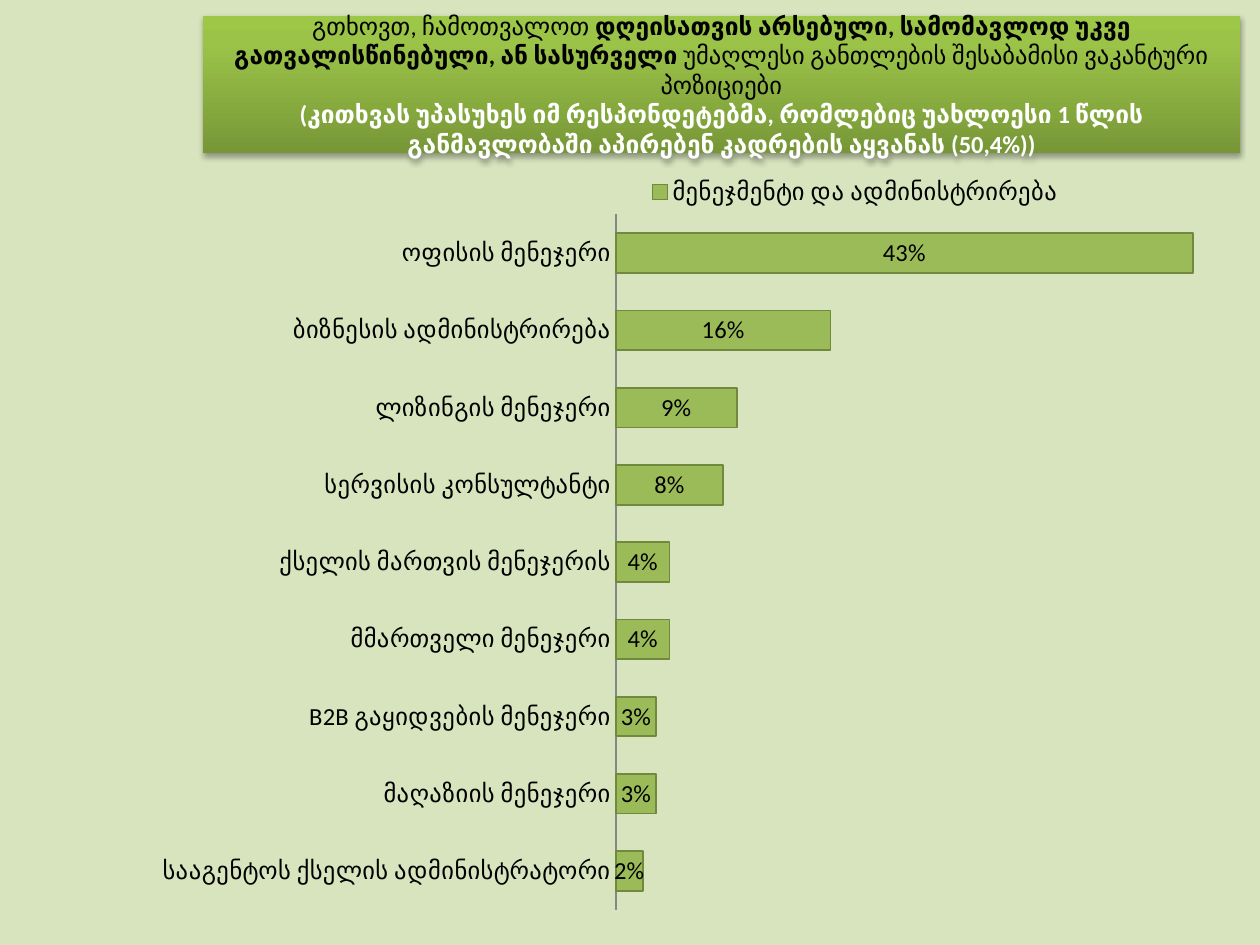
from copy import deepcopy

from lxml import etree
from pptx import Presentation
from pptx import util as u
from pptx.chart.data import CategoryChartData
from pptx.dml.color import RGBColor
from pptx.enum import chart as charts, shapes, text
from pptx.oxml import parse_xml
from pptx.oxml.ns import nsdecls, qn

PX = 914400 / 126
COLORS = {
    "background": "D7E4BD", "black": "000000", "white": "FFFFFF",
    "bar": "9BBB59", "outline": "71893F", "axis": "868686",
}
BANNER_STOPS = [("779737", 0), ("9BC348", 0.8), ("9DC746", 1)]
HEADING = [
    [("გთხოვთ, ჩამოთვალოთ ", "black", False),
     ("დღეისათვის არსებული, სამომავლოდ უკვე გათვალისწინებული, ან სასურველი ", "black", True),
     ("უმაღლესი განთლების შესაბამისი ვაკანტური პოზიციები", "black", False)],
    [("(კითხვას უპასუხეს იმ რესპონდეტებმა, რომლებიც უახლოესი 1 წლის "
      "განმავლობაში აპირებენ კადრების აყვანას (50,4%))", "white", True)],
]
SERIES = "მენეჯმენტი და ადმინისტრირება"
POSITIONS = {
    "სააგენტოს ქსელის ადმინისტრატორი": 0.02,
    "მაღაზიის მენეჯერი": 0.03,
    "B2B გაყიდვების მენეჯერი": 0.03,
    "მმართველი მენეჯერი": 0.04,
    "ქსელის მართვის მენეჯერის": 0.04,
    "სერვისის კონსულტანტი": 0.08,
    "ლიზინგის მენეჯერი": 0.09,
    "ბიზნესის ადმინისტრირება": 0.16,
    "ოფისის მენეჯერი": 0.43,
}


def px(*lengths):
    return [u.Emu(round(length * PX)) for length in lengths]


def color(name):
    return RGBColor.from_string(COLORS[name])


def assign(target, **values):
    for name, value in values.items():
        setattr(target, name, value)


def manual_layout(x, y, w, h, inner=False):
    """Return a chart layout element, in fractions of the chart area."""
    target = '<c:layoutTarget val="inner"/>' if inner else ""
    modes = '<c:xMode val="edge"/><c:yMode val="edge"/>'
    sizes = "".join(f'<c:{key} val="{value}"/>' for key, value in zip("xywh", (x, y, w, h)))
    return parse_xml(f'<c:layout {nsdecls("c")}><c:manualLayout>{target}{modes}{sizes}'
                     '</c:manualLayout></c:layout>')


class SlideBuilder:
    def __init__(self, slide, font="Calibri", size=14):
        self.slide = slide
        self.font_values = {"name": font, "size": u.Pt(size)}

    def background(self, name):
        fill = self.slide.background.fill
        fill.solid()
        fill.fore_color.rgb = color(name)

    def style_font(self, font, name="black", bold=False):
        assign(font, **self.font_values, bold=bold)
        font.color.rgb = color(name)

    def banner(self, box, stops, paragraphs):
        shape = self.slide.shapes.add_shape(shapes.MSO_SHAPE.RECTANGLE, *px(*box))
        shape.line.fill.background()
        self.gradient(shape, stops)
        self.shadow(shape)
        frame = shape.text_frame
        assign(frame, word_wrap=True, vertical_anchor=text.MSO_ANCHOR.MIDDLE)
        for index, runs in enumerate(paragraphs):
            paragraph = frame.add_paragraph() if index else frame.paragraphs[0]
            paragraph.alignment = text.PP_ALIGN.CENTER
            for words, name, bold in runs:
                run = paragraph.add_run()
                run.text = words
                self.style_font(run.font, name, bold)

    def gradient(self, shape, stops):
        fill = shape.fill
        fill.gradient()
        fill.gradient_angle = 90
        stop_list = shape._element.spPr.find(".//" + qn("a:gsLst"))
        stop_list.append(deepcopy(stop_list[0]))
        for stop, (rgb, position) in zip(fill.gradient_stops, stops):
            stop.color.rgb = RGBColor.from_string(rgb)
            stop.position = position

    def shadow(self, shape):
        shape.shadow.inherit = False
        effects = shape._element.spPr.find(qn("a:effectLst"))
        outer = etree.SubElement(effects, qn("a:outerShdw"), blurRad=str(u.Pt(3.1)),
                                 dist=str(u.Pt(1.8)), dir="5400000", rotWithShape="0")
        shade = etree.SubElement(outer, qn("a:srgbClr"), val=COLORS["black"])
        etree.SubElement(shade, qn("a:alpha"), val="35000")

    def bar_chart(self, box, series_name, values):
        data = CategoryChartData(number_format="0%")
        data.categories = list(values)
        data.add_series(series_name, list(values.values()))
        chart = self.slide.shapes.add_chart(
            charts.XL_CHART_TYPE.BAR_STACKED, *px(*box), data).chart
        assign(chart, has_title=False, has_legend=True)
        self.style_font(chart.font)
        assign(chart.legend, position=charts.XL_LEGEND_POSITION.TOP, include_in_layout=False)
        chart.legend._element.find(qn("c:legendPos")).addnext(
            manual_layout(0.51, 0.01, 0.34, 0.05))
        plot_area = chart._chartSpace.chart.plotArea
        for layout in plot_area.findall(qn("c:layout")):
            plot_area.remove(layout)
        plot_area.insert(0, manual_layout(0.484, 0.065, 0.5, 0.91, inner=True))

        assign(chart.value_axis, visible=False, has_major_gridlines=False,
               minimum_scale=0, maximum_scale=0.455)
        axis = chart.category_axis
        assign(axis, major_tick_mark=charts.XL_TICK_MARK.NONE, has_major_gridlines=False)
        axis.format.line.color.rgb = color("axis")

        plot = chart.plots[0]
        assign(plot, gap_width=95, overlap=100, vary_by_categories=False, has_data_labels=True)
        assign(plot.data_labels, show_value=True, number_format="0%",
               number_format_is_linked=False, position=charts.XL_LABEL_POSITION.CENTER)
        self.style_font(plot.data_labels.font)
        bars = plot.series[0].format
        bars.fill.solid()
        bars.fill.fore_color.rgb = color("bar")
        bars.line.color.rgb = color("outline")
        bars.line.width = u.Pt(1)


def main():
    presentation = Presentation()
    assign(presentation, slide_width=u.Inches(10), slide_height=u.Inches(7.5))
    builder = SlideBuilder(presentation.slides.add_slide(presentation.slide_layouts[6]))
    builder.background("background")
    builder.banner((203, 16, 1037, 137), BANNER_STOPS, HEADING)
    builder.bar_chart((25, 165, 1221, 764), SERIES, POSITIONS)
    presentation.save("out.pptx")


if __name__ == "__main__":
    main()
